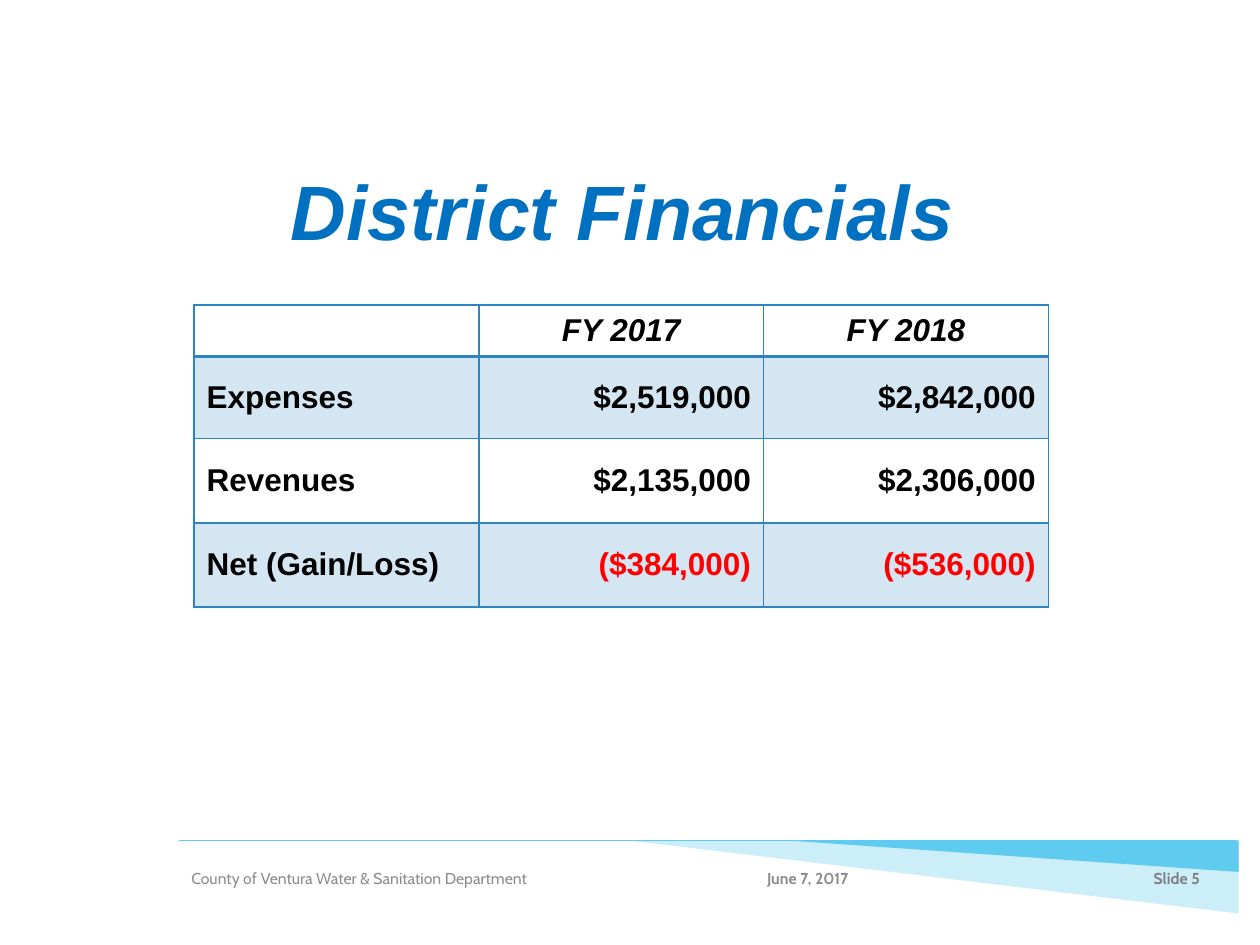
from lxml import etree
from pptx import Presentation
from pptx.dml.color import RGBColor
from pptx.enum.shapes import MSO_CONNECTOR, MSO_SHAPE
from pptx.enum.text import MSO_ANCHOR, MSO_AUTO_SIZE, PP_ALIGN
from pptx.oxml.ns import qn
from pptx.util import Inches, Pt

LEFT, CENTER, RIGHT = PP_ALIGN.LEFT, PP_ALIGN.CENTER, PP_ALIGN.RIGHT
TOP, MIDDLE = MSO_ANCHOR.TOP, MSO_ANCHOR.MIDDLE

COLORS = {
    "title": "0070C0", "text": "000000", "loss": "FF0000", "grid": "2E83C3",
    "accent": "5FCBEF", "footer": "8C8C8C", "number": "808080",
}

# Content
TITLE = "District Financials"
FINANCIALS = [
    ["", "FY 2017", "FY 2018"],
    ["Expenses", "$2,519,000", "$2,842,000"],
    ["Revenues", "$2,135,000", "$2,306,000"],
    ["Net (Gain/Loss)", "($384,000)", "($536,000)"],
]
COLUMN_WIDTH = 2.26
ROW_HEIGHTS = [0.41, 0.65, 0.67, 0.67]

BAND_TOP, BAND_RIGHT = 6.67, 9.83
WEDGES = [(4.84, 0.58, 32), (3.58, 0.25, 100)]  # width, height, opacity %

FOOTERS = [  # text, left, width, alignment, bold, color
    ("June 7, 2017", 5.24, 2.34, CENTER, True, "footer"),
    ("County of Ventura Water & Sanitation Department", 1.42, 3.58, LEFT, False, "footer"),
    ("Slide 5", 8.83, 0.79, RIGHT, True, "number"),
]


def rgb(name):
    return RGBColor.from_string(COLORS[name])


def fill_solid(fill, parent, color, opacity):
    fill.solid()
    fill.fore_color.rgb = rgb(color)
    if opacity < 100:
        clr = parent.find(qn("a:solidFill")).find(qn("a:srgbClr"))
        etree.SubElement(clr, qn("a:alpha"), val=str(opacity * 1000))


def write(frame, text, align, font_name, size, color, bold=True, italic=False):
    frame.text = text
    paragraph = frame.paragraphs[0]
    paragraph.alignment = align
    for run in paragraph.runs:
        font = run.font
        font.name, font.size = font_name, Pt(size)
        font.bold, font.italic = bold, italic
        font.color.rgb = rgb(color)


def add_border(cell_props, side, width):
    line = etree.SubElement(cell_props, qn("a:ln" + side), w=str(Pt(width)))
    solid = etree.SubElement(line, qn("a:solidFill"))
    etree.SubElement(solid, qn("a:srgbClr"), val=COLORS["grid"])


def add_band(slide):
    rule = slide.shapes.add_connector(
        MSO_CONNECTOR.STRAIGHT, Inches(1.42), Inches(BAND_TOP),
        Inches(9.81), Inches(BAND_TOP))
    rule.line.color.rgb = rgb("accent")
    rule.line.width = Pt(1)
    etree.SubElement(rule._element.spPr, qn("a:effectLst"))
    for width, height, opacity in WEDGES:
        wedge = slide.shapes.add_shape(
            MSO_SHAPE.RIGHT_TRIANGLE, Inches(BAND_RIGHT - width),
            Inches(BAND_TOP), Inches(width), Inches(height))
        wedge.rotation = 180
        wedge.shadow.inherit = False
        wedge.line.fill.background()
        fill_solid(wedge.fill, wedge._element.spPr, "accent", opacity)


def add_footers(slide):
    for text, left, width, align, bold, color in FOOTERS:
        box = slide.shapes.add_textbox(
            Inches(left), Inches(6.77), Inches(width), Inches(0.4))
        frame = box.text_frame
        frame.word_wrap = True
        frame.vertical_anchor = MIDDLE
        write(frame, text, align, "Cabin", 9, color, bold)


def set_title(slide):
    title = slide.shapes.title
    title.left, title.top = Inches(0.4), Inches(1.25)
    title.width, title.height = Inches(9.08), Inches(0.84)
    frame = title.text_frame
    frame.word_wrap = True
    frame.auto_size = MSO_AUTO_SIZE.SHAPE_TO_FIT_TEXT
    frame.vertical_anchor = TOP
    write(frame, TITLE, CENTER, "Arial", 44, "title", italic=True)


def add_financials(slide):
    columns = len(FINANCIALS[0])
    table = slide.shapes.add_table(
        len(FINANCIALS), columns, Inches(1.54), Inches(2.42),
        Inches(COLUMN_WIDTH * columns), Inches(sum(ROW_HEIGHTS))).table
    for column in table.columns:
        column.width = Inches(COLUMN_WIDTH)
    for r, (values, height) in enumerate(zip(FINANCIALS, ROW_HEIGHTS)):
        table.rows[r].height = Inches(height)
        for c, value in enumerate(values):
            cell = table.cell(r, c)
            cell.vertical_anchor = MIDDLE
            header = r == 0
            align = CENTER if header else RIGHT if c else LEFT
            color = "loss" if value.startswith("(") else "text"
            write(cell.text_frame, value, align, "Arial", 18, color, italic=header)
            # The rule under the header is heavier than the grid
            props = cell._tc.get_or_add_tcPr()
            for side in "LRTB":
                heavy = (r, side) in [(0, "B"), (1, "T")]
                add_border(props, side, 2 if heavy else 1)
            if r % 2:
                fill_solid(cell.fill, props, "grid", 20)
            else:
                cell.fill.background()


def main():
    prs = Presentation()
    prs.slide_width, prs.slide_height = Inches(10), Inches(7.5)
    slide = prs.slides.add_slide(prs.slide_layouts[5])
    add_band(slide)
    add_footers(slide)
    set_title(slide)
    add_financials(slide)
    prs.save("out.pptx")


if __name__ == "__main__":
    main()
